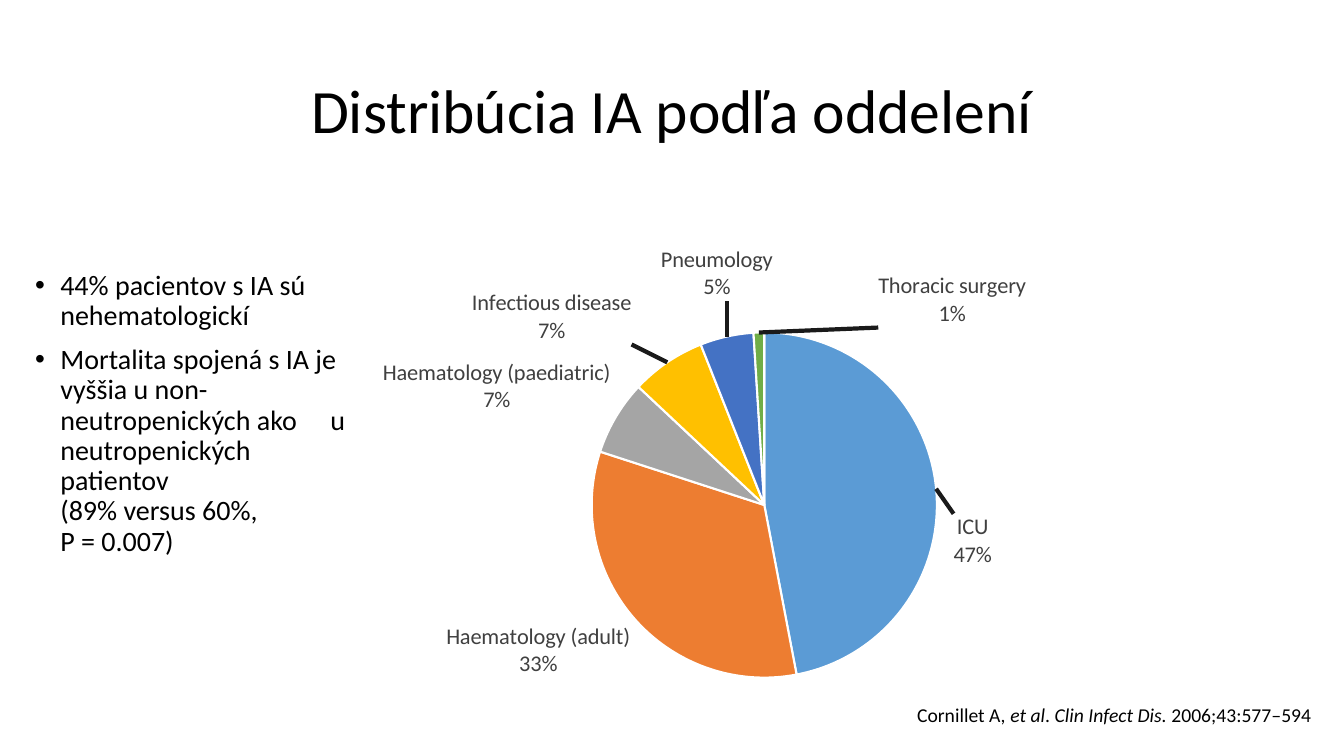
from dataclasses import dataclass

from lxml.etree import SubElement
from pptx import Presentation
from pptx.chart.chart import Chart
from pptx.chart.data import CategoryChartData
from pptx.dml.color import RGBColor
from pptx.enum.chart import XL_CHART_TYPE
from pptx.enum.text import MSO_ANCHOR, PP_ALIGN
from pptx.oxml import parse_xml
from pptx.oxml.ns import nsdecls, qn
from pptx.slide import Slide
from pptx.text.text import TextFrame, _Paragraph
from pptx.util import Pt


@dataclass(frozen=True)
class Theme:
    font: str = "Calibri"
    text: str = "000000"
    label: str = "404040"
    leader: str = "1A1A1A"
    separator: str = "FFFFFF"
    title_size: int = 44
    body_size: int = 20
    label_size: int = 16
    citation_size: int = 14


@dataclass(frozen=True)
class Box:
    left: float
    top: float
    width: float
    height: float


@dataclass(frozen=True)
class Department:
    name: str
    percent: int
    color: str
    label_shift: tuple[float, float] | None = None


@dataclass(frozen=True)
class CitationPart:
    text: str
    italic: bool = False


THEME = Theme()
TITLE_BOX = Box(66, 29, 828, 104)
BODY_BOX = Box(18, 190, 243, 276)
CHART_BOX = Box(132, 142.5, 828, 343)
CITATION_BOX = Box(648, 500.5, 312, 29.5)
PLOT_LAYOUT = Box(0.26, 0.277, 0.48, 0.719)
BULLET_INDENT = 18
GAP_TAB = 218

BULLETS = [
    "44% pacientov s IA sú nehematologickí",
    "Mortalita spojená s IA je vyššia u non-neutropenických ako\tu "
    "neutropenických patientov\v(89% versus 60%,\vP = 0.007)",
]
DEPARTMENTS = [
    Department("ICU", 47, "5B9BD5", (0.01, 0.167)),
    Department("Haematology (adult)", 33, "ED7D31"),
    Department("Haematology (paediatric)", 7, "A5A5A5"),
    Department("Infectious disease", 7, "FFC000", (-0.028, -0.027)),
    Department("Pneumology", 5, "4472C4", (0.041, -0.062)),
    Department("Thoracic surgery", 1, "70AD47", (0.167, 0.002)),
]
CITATION = [
    CitationPart("Cornillet A, "),
    CitationPart("et al", True),
    CitationPart(". "),
    CitationPart("Clin Infect Dis.", True),
    CitationPart(" 2006;43:577‒594"),
]


def add_text_frame(slide: Slide, box: Box) -> TextFrame:
    shape = slide.shapes.add_textbox(
        Pt(box.left), Pt(box.top), Pt(box.width), Pt(box.height)
    )
    shape.text_frame.word_wrap = True
    return shape.text_frame


def style_paragraph(paragraph: _Paragraph, size: int) -> None:
    paragraph.line_spacing = 0.9
    paragraph.font.name = THEME.font
    paragraph.font.size = Pt(size)
    paragraph.font.color.rgb = RGBColor.from_string(THEME.text)


def add_title(slide: Slide, text: str) -> None:
    frame = add_text_frame(slide, TITLE_BOX)
    frame.vertical_anchor = MSO_ANCHOR.MIDDLE
    paragraph = frame.paragraphs[0]
    paragraph.text = text
    paragraph.alignment = PP_ALIGN.CENTER
    style_paragraph(paragraph, THEME.title_size)


def add_bullets(slide: Slide, bullets: list[str]) -> None:
    frame = add_text_frame(slide, BODY_BOX)
    for index, text in enumerate(bullets):
        paragraph = frame.add_paragraph() if index else frame.paragraphs[0]
        paragraph.text = text
        properties = paragraph._p.get_or_add_pPr()
        properties.set("marL", str(Pt(BULLET_INDENT)))
        properties.set("indent", str(-Pt(BULLET_INDENT)))
        SubElement(properties, qn("a:buFont"), typeface="Arial")
        SubElement(properties, qn("a:buChar"), char="•")
        tabs = SubElement(properties, qn("a:tabLst"))
        SubElement(tabs, qn("a:tab"), pos=str(Pt(GAP_TAB)), algn="l")
        if index:
            paragraph.space_before = Pt(10)
        style_paragraph(paragraph, THEME.body_size)


def add_citation(slide: Slide, parts: list[CitationPart]) -> None:
    paragraph = add_text_frame(slide, CITATION_BOX).paragraphs[0]
    for part in parts:
        run = paragraph.add_run()
        run.text = part.text
        run.font.italic = part.italic
    style_paragraph(paragraph, THEME.citation_size)


def layout_xml(**values: float | str) -> str:
    items = "".join(f'<c:{key} val="{value}"/>' for key, value in values.items())
    return f"<c:layout {nsdecls('c')}><c:manualLayout>{items}</c:manualLayout></c:layout>"


def set_plot_layout(chart: Chart) -> None:
    plot_area = chart._chartSpace.chart.plotArea
    for layout in plot_area.findall(qn("c:layout")):
        plot_area.remove(layout)
    layout = layout_xml(
        layoutTarget="inner", xMode="edge", yMode="edge",
        x=PLOT_LAYOUT.left, y=PLOT_LAYOUT.top,
        w=PLOT_LAYOUT.width, h=PLOT_LAYOUT.height,
    )
    plot_area.insert(0, parse_xml(layout))


def labels_xml(departments: list[Department]) -> str:
    """Category and percentage labels, some moved away from their slice."""
    content = (
        '<c:dLblPos val="outEnd"/><c:showLegendKey val="0"/><c:showVal val="0"/>'
        '<c:showCatName val="1"/><c:showSerName val="0"/><c:showPercent val="1"/>'
        '<c:showBubbleSize val="0"/><c:separator>\n</c:separator>'
    )
    look = (
        '<c:numFmt formatCode="0%" sourceLinked="0"/><c:spPr><a:noFill/><a:ln><a:noFill/></a:ln></c:spPr>'
        f'<c:txPr><a:bodyPr/><a:p><a:pPr><a:defRPr sz="{THEME.label_size * 100}">'
        f'<a:solidFill><a:srgbClr val="{THEME.label}"/></a:solidFill>'
        f'<a:latin typeface="{THEME.font}"/></a:defRPr></a:pPr></a:p></c:txPr>'
    )
    moved = "".join(
        f'<c:dLbl><c:idx val="{index}"/>'
        f"{layout_xml(x=department.label_shift[0], y=department.label_shift[1])}"
        f"{look}{content}</c:dLbl>"
        for index, department in enumerate(departments)
        if department.label_shift
    )
    leader = (
        f'<c:showLeaderLines val="1"/><c:leaderLines><c:spPr><a:ln w="{Pt(3)}"><a:solidFill>'
        f'<a:srgbClr val="{THEME.leader}"/></a:solidFill></a:ln></c:spPr></c:leaderLines>'
    )
    return f"<c:dLbls {nsdecls('c', 'a')}>{moved}{look}{content}{leader}</c:dLbls>"


def add_department_pie(slide: Slide, departments: list[Department]) -> None:
    data = CategoryChartData()
    data.categories = [department.name for department in departments]
    data.add_series("Series 1", [department.percent for department in departments])
    chart = slide.shapes.add_chart(
        XL_CHART_TYPE.PIE, Pt(CHART_BOX.left), Pt(CHART_BOX.top),
        Pt(CHART_BOX.width), Pt(CHART_BOX.height), data,
    ).chart
    chart.has_legend = False
    chart.has_title = False
    chart.font.name = THEME.font
    chart.font.size = Pt(THEME.label_size)
    chart.font.color.rgb = RGBColor.from_string(THEME.label)
    set_plot_layout(chart)
    chart.plots[0].vary_by_categories = True
    series = chart.plots[0].series[0]
    for index, department in enumerate(departments):
        slice_format = series.points[index].format
        slice_format.fill.solid()
        slice_format.fill.fore_color.rgb = RGBColor.from_string(department.color)
        slice_format.line.color.rgb = RGBColor.from_string(THEME.separator)
        slice_format.line.width = Pt(1.5)
    series._element.find(qn("c:cat")).addprevious(parse_xml(labels_xml(departments)))


def main() -> None:
    presentation = Presentation()
    presentation.slide_width, presentation.slide_height = Pt(960), Pt(540)
    slide = presentation.slides.add_slide(presentation.slide_layouts[6])
    add_title(slide, "Distribúcia IA podľa oddelení")
    add_department_pie(slide, DEPARTMENTS)
    add_bullets(slide, BULLETS)
    add_citation(slide, CITATION)
    presentation.save("out.pptx")


if __name__ == "__main__":
    main()
